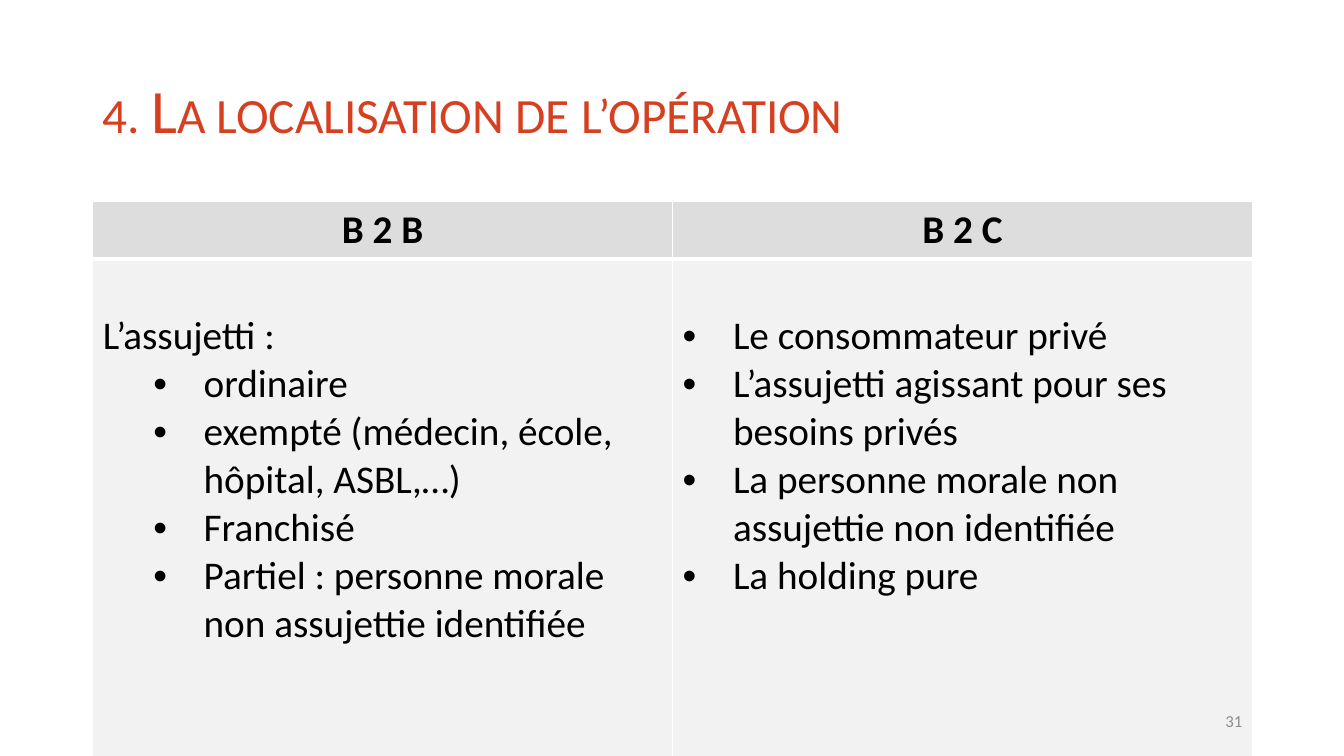
from dataclasses import dataclass

from lxml import etree
from pptx import Presentation, util as u
from pptx.dml.color import RGBColor
from pptx.enum import text
from pptx.oxml.ns import qn


@dataclass(frozen=True)
class Theme:
    font: str = "Calibri"
    title_color: str = "D64020"
    text_color: str = "000000"
    number_color: str = "8C8C8C"
    header_fill: str = "DDDDDD"
    body_fill: str = "F2F2F2"
    border: str = "FFFFFF"
    title_size: int = 44
    table_size: int = 28
    number_size: int = 12


@dataclass(frozen=True)
class Column:
    heading: str
    intro: str
    indent: float
    items: tuple[str, ...]


@dataclass(frozen=True)
class Label:
    content: str
    box: tuple[float, float, float, float]
    size: int
    color: str
    alignment: text.PP_ALIGN
    line_spacing: float = 1.0
    small_caps: bool = False


THEME = Theme()
LEFT, WIDTH = 0.92, 11.5
TABLE_TOP, HEADER_HEIGHT, BODY_HEIGHT = 2, 0.57, 5.23
BODY_TOP_MARGIN = 0.53
HANGING = 0.5
THIN, THICK = 1, 3

LABELS = (
    Label("4. La localisation de l’opération", (LEFT, 0.4, WIDTH, 1.45),
          THEME.title_size, THEME.title_color, text.PP_ALIGN.LEFT, 0.9, True),
    Label("31", (9.42, 6.95, 3, 0.4),
          THEME.number_size, THEME.number_color, text.PP_ALIGN.RIGHT),
)
COLUMNS = (
    Column("B 2 B", "L’assujetti :", 1, (
        "ordinaire",
        "exempté (médecin, école, hôpital, ASBL,…)",
        "Franchisé",
        "Partiel : personne morale non assujettie identifiée",
    )),
    Column("B 2 C", "", 0.5, (
        "Le consommateur privé",
        "L’assujetti agissant pour ses besoins privés",
        "La personne morale non assujettie non identifiée",
        "La holding pure",
    )),
)


def style_font(font, size: int, color: str, bold: bool = False) -> None:
    font.name = THEME.font
    font.size = u.Pt(size)
    font.bold = bold
    font.color.rgb = RGBColor.from_string(color)


def add_label(slide, label: Label) -> None:
    shape = slide.shapes.add_textbox(*(u.Inches(value) for value in label.box))
    frame = shape.text_frame
    frame.word_wrap = True
    frame.vertical_anchor = text.MSO_ANCHOR.MIDDLE
    frame.text = label.content
    paragraph = frame.paragraphs[0]
    paragraph.alignment = label.alignment
    paragraph.line_spacing = label.line_spacing
    run = paragraph.runs[0]
    style_font(run.font, label.size, label.color)
    if label.small_caps:
        run.font._element.set("cap", "small")


def add_bullet(paragraph, indent: float) -> None:
    properties = paragraph._p.get_or_add_pPr()
    properties.set("marL", str(u.Inches(indent)))
    properties.set("indent", str(-u.Inches(HANGING)))
    etree.SubElement(properties, qn("a:buFont"), typeface="Arial")
    etree.SubElement(properties, qn("a:buChar"), char="•")


def style_cell(cell, fill: str, top: int, bottom: int) -> None:
    cell.fill.solid()
    cell.fill.fore_color.rgb = RGBColor.from_string(fill)
    # Borders come before the fill
    properties = cell._tc.get_or_add_tcPr()
    widths = {"L": THIN, "R": THIN, "T": top, "B": bottom}
    for position, (side, width) in enumerate(widths.items()):
        line = etree.Element(qn(f"a:ln{side}"), w=str(u.Pt(width)))
        solid = etree.SubElement(line, qn("a:solidFill"))
        etree.SubElement(solid, qn("a:srgbClr"), val=THEME.border)
        properties.insert(position, line)


def fill_header(cell, column: Column) -> None:
    cell.text_frame.text = column.heading
    paragraph = cell.text_frame.paragraphs[0]
    paragraph.alignment = text.PP_ALIGN.CENTER
    style_font(paragraph.runs[0].font, THEME.table_size, THEME.text_color, True)
    style_cell(cell, THEME.header_fill, THIN, THICK)


def fill_body(cell, column: Column) -> None:
    intro = (column.intro,) if column.intro else ()
    cell.text_frame.text = "\n".join(intro + column.items)
    cell.margin_top = u.Inches(BODY_TOP_MARGIN)
    for index, paragraph in enumerate(cell.text_frame.paragraphs):
        if index >= len(intro):
            add_bullet(paragraph, column.indent)
        style_font(paragraph.runs[0].font, THEME.table_size, THEME.text_color)
    style_cell(cell, THEME.body_fill, THICK, THIN)


def add_comparison(slide, columns: tuple[Column, ...]) -> None:
    table = slide.shapes.add_table(
        2, len(columns), u.Inches(LEFT), u.Inches(TABLE_TOP),
        u.Inches(WIDTH), u.Inches(HEADER_HEIGHT + BODY_HEIGHT)).table
    table.horz_banding = False
    table.rows[0].height = u.Inches(HEADER_HEIGHT)
    table.rows[1].height = u.Inches(BODY_HEIGHT)
    for index, column in enumerate(columns):
        fill_header(table.cell(0, index), column)
        fill_body(table.cell(1, index), column)


def main() -> None:
    presentation = Presentation()
    presentation.slide_width = u.Inches(13.33)
    presentation.slide_height = u.Inches(7.5)
    slide = presentation.slides.add_slide(presentation.slide_layouts[6])
    title, number = LABELS

    # Title, comparison table, then the slide number on top
    add_label(slide, title)
    add_comparison(slide, COLUMNS)
    add_label(slide, number)
    presentation.save("out.pptx")


if __name__ == "__main__":
    main()
